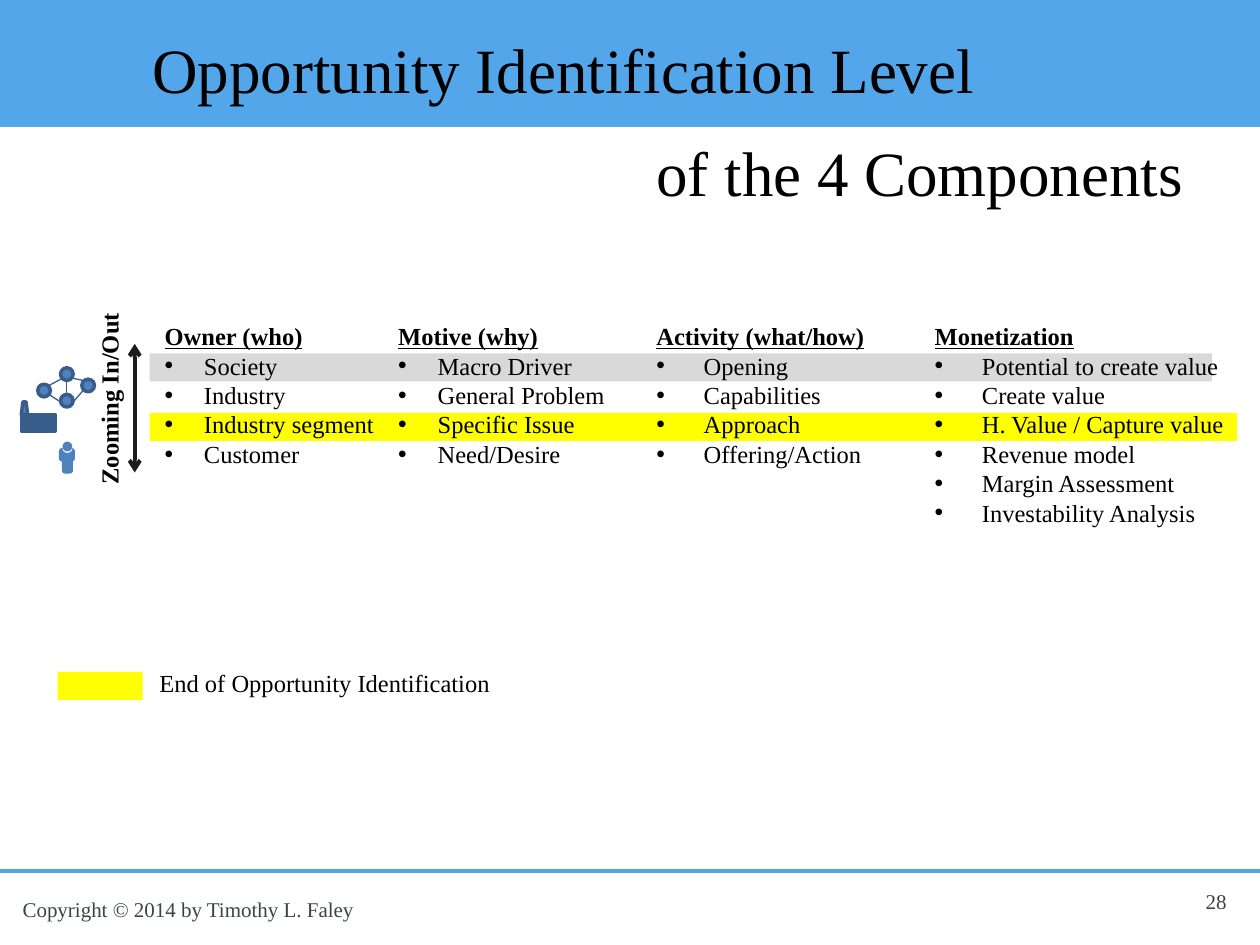
from dataclasses import dataclass
from itertools import product

from lxml import etree
from pptx import Presentation, util as u
from pptx.dml.color import RGBColor
from pptx.enum import shapes, text
from pptx.oxml import ns

Pt = u.Pt
FONT = "Times New Roman"
COLORS = {
    "band": "52A6E9", "gray": "D9D9D9", "highlight": "FFFF00", "black": "000000",
    "footer": "3B4445", "arrow": "1C1C1C", "icon": "4F81BD", "icon_line": "385D8A",
    "white": "FFFFFF",
}
RECTANGLE = shapes.MSO_SHAPE.RECTANGLE
OVAL = shapes.MSO_SHAPE.OVAL
ROUNDED = shapes.MSO_SHAPE.ROUNDED_RECTANGLE
TRAPEZOID = shapes.MSO_SHAPE.TRAPEZOID


@dataclass
class Box:
    left: float
    top: float
    width: float
    height: float

    def lengths(self) -> list:
        return [Pt(value) for value in (self.left, self.top, self.width, self.height)]


@dataclass
class Column:
    heading: str
    items: list[str]
    left: float
    width: float
    indent: float


def color(name: str) -> RGBColor:
    return RGBColor.from_string(COLORS[name])


def add_block(container, kind, box: Box, fill: str, line: str | None = None,
              weight: float = 2, rotation: float = 0):
    shape = container.shapes.add_shape(kind, *box.lengths())
    shape.shadow.inherit = False
    shape.rotation = rotation
    shape.fill.solid()
    shape.fill.fore_color.rgb = color(fill)
    if line:
        shape.line.color.rgb = color(line)
        shape.line.width = Pt(weight)
    else:
        shape.line.fill.background()
    return shape


def add_line(container, start: tuple, end: tuple, name: str, weight: float,
             arrows: bool = False) -> None:
    connector = container.shapes.add_connector(
        shapes.MSO_CONNECTOR.STRAIGHT, *[Pt(value) for value in (*start, *end)])
    connector.line.color.rgb = color(name)
    connector.line.width = Pt(weight)
    if arrows:
        outline = connector.line._get_or_add_ln()
        for tag in ("a:headEnd", "a:tailEnd"):
            etree.SubElement(outline, ns.qn(tag), type="arrow")
    etree.SubElement(connector._element.spPr, ns.qn("a:effectLst"))


def style(paragraph, size: float, name: str = "black", bold: bool = False,
          underline: bool = False) -> None:
    font = paragraph.font
    font.name, font.size, font.bold, font.underline = FONT, Pt(size), bold, underline
    font.color.rgb = color(name)


def add_text(slide, box: Box, lines: list[str], size: float, name: str = "black",
             bold: bool = False, wrap: bool = False):
    shape = slide.shapes.add_textbox(*box.lengths())
    frame = shape.text_frame
    frame.word_wrap = wrap
    if not wrap:
        frame.auto_size = text.MSO_AUTO_SIZE.SHAPE_TO_FIT_TEXT
    frame.text = "\n".join(lines)
    for paragraph in frame.paragraphs:
        style(paragraph, size, name, bold)
    return shape


def add_column(slide, column: Column) -> None:
    lines = [column.heading, *column.items]
    box = Box(column.left, 180, column.width, 7.2 + 16.95 * len(lines))
    frame = add_text(slide, box, lines, 14).text_frame
    heading, *items = frame.paragraphs
    style(heading, 14, bold=True, underline=True)
    for paragraph in items:
        properties = paragraph._p.get_or_add_pPr()
        properties.set("marL", str(Pt(column.indent)))
        properties.set("indent", str(-Pt(column.indent)))
        bullet_font = etree.Element(ns.qn("a:buFont"), typeface="Arial")
        bullet = etree.Element(ns.qn("a:buChar"), char="•")
        properties.insert(0, bullet_font)
        properties.insert(1, bullet)


def add_network(slide) -> None:
    group = slide.shapes.add_group_shape()
    for left, top in [(34.6, 210.2), (46.8, 216.7), (34.6, 225.4), (21.6, 219.6)]:
        add_block(group, OVAL, Box(left, top, 7.2, 7.2), "icon", "icon_line")
    for start, end in [((28, 220.3), (36, 216)), ((41, 216), (47.5, 217.4)),
                       ((41.8, 229.7), (47.5, 223.2)), ((38.2, 225.4), (38.2, 217.4)),
                       ((34.6, 229.7), (28, 225.4))]:
        add_line(group, start, end, "icon_line", 0.75)


def add_factory(slide) -> None:
    group = slide.shapes.add_group_shape()
    add_block(group, RECTANGLE, Box(12.2, 236.9, 19.4, 9.4), "icon", "icon_line")
    for row, column in product(range(2), range(6)):
        window = Box(13.7 + 2.88 * column, 239 + 2.88 * row, 2.2, 2.2)
        add_block(group, RECTANGLE, window, "icon", "icon_line")
    add_block(group, TRAPEZOID, Box(12.2, 229.7, 3.6, 7.2), "icon", "icon_line")


def add_person(slide) -> None:
    group = slide.shapes.add_group_shape()
    add_block(group, ROUNDED, Box(34.6, 263.5, 7.9, 4.3), "icon", "icon", rotation=90)
    add_block(group, ROUNDED, Box(35.3, 256.3, 5.8, 7.2), "icon", "icon", rotation=90)
    add_block(group, OVAL, Box(36.7, 254.9, 3.6, 2.9), "icon", "white")
    add_block(group, OVAL, Box(36.7, 253.4, 3.6, 3.6), "icon", "icon")


COLUMNS = [
    Column("Activity (what/how)",
           ["Opening", "Capabilities", "Approach", "Offering/Action"], 368, 134, 27),
    Column("Motive (why)",
           ["Macro Driver", "General Problem", "Specific Issue", "Need/Desire"],
           220.5, 133, 22.5),
    Column("Monetization",
           ["Potential to create value", "Create value", "H. Value / Capture value",
            "Revenue model", "Margin Assessment", "Investability Analysis"],
           527, 181.5, 27),
    Column("Owner (who)",
           ["Society", "Industry", "Industry segment", "Customer"], 87, 135.5, 22.5),
]


def main() -> None:
    presentation = Presentation()
    presentation.slide_width, presentation.slide_height = Pt(720), Pt(540)
    slide = presentation.slides.add_slide(presentation.slide_layouts[6])

    # Header band and footer
    add_block(slide, RECTANGLE, Box(0, 0, 720, 72.5), "band", "band", 0.75)
    add_line(slide, (0, 497.5), (720, 497.5), "band", 2.25)
    add_text(slide, Box(5.8, 509, 206, 21.8), ["Copyright © 2014 by Timothy L. Faley"],
             12, "footer")

    # Row highlights behind the columns
    add_block(slide, RECTANGLE, Box(85.5, 202, 607, 16), "gray")
    add_block(slide, RECTANGLE, Box(85.5, 236, 621.5, 16), "highlight")

    # Title in two staggered lines
    title = add_text(slide, Box(80, 60, 718.5, 63.2),
                     ["Opportunity Identification Level", "of the 4 Components"],
                     36, wrap=True).text_frame
    title.vertical_anchor = text.MSO_ANCHOR.BOTTOM
    second_line = title.paragraphs[1]
    second_line.space_before = Pt(16)
    second_line._p.get_or_add_pPr().set("marL", str(Pt(288)))

    # The four components
    for column in COLUMNS:
        add_column(slide, column)

    # Zoom axis
    add_line(slide, (77, 196.5), (77, 270), "arrow", 2.25, arrows=True)
    zoom = add_text(slide, Box(5.8, 215.3, 113, 24.2), ["Zooming In/Out"], 14, bold=True)
    zoom.rotation = 270

    # Zoom level icons
    add_network(slide)
    add_factory(slide)
    add_person(slide)

    # Page number
    number = add_text(slide, Box(558, 504, 150, 36), ["28"], 12, "footer", wrap=True)
    number.text_frame.paragraphs[0].alignment = text.PP_ALIGN.RIGHT

    # Legend
    add_block(slide, RECTANGLE, Box(33, 384, 48.5, 16), "highlight")
    add_text(slide, Box(84, 378, 204.5, 24.2), ["End of Opportunity Identification"], 14)

    presentation.save("out.pptx")


if __name__ == "__main__":
    main()
